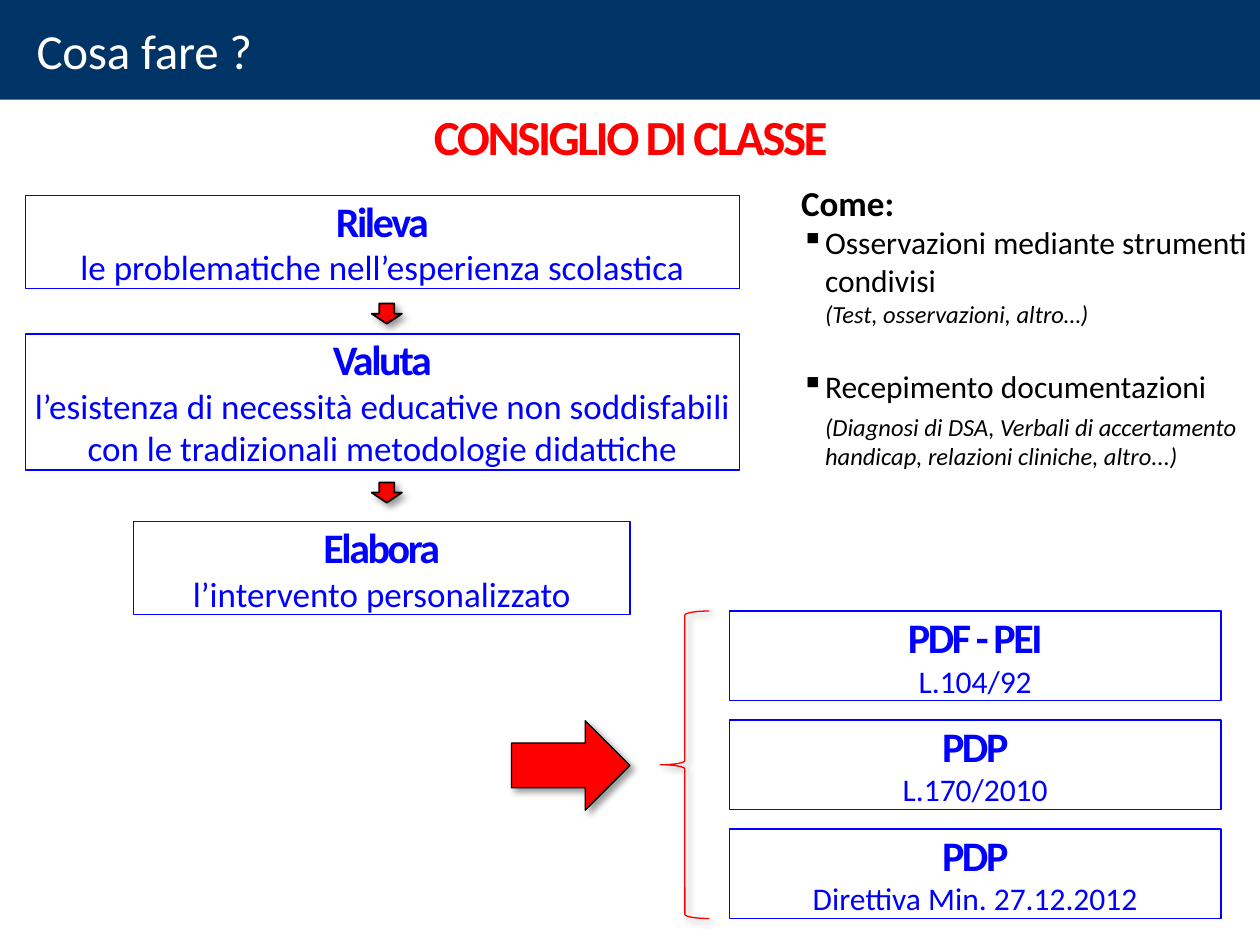
from dataclasses import dataclass

from lxml import etree
from pptx import Presentation
from pptx import util as u
from pptx.dml.color import RGBColor
from pptx.enum import shapes, text
from pptx.oxml import ns

FONT = "Calibri"
COLORS = {
    "navy": "003366",
    "red": "FF0000",
    "blue": "0000FF",
    "white": "FFFFFF",
    "black": "000000",
}


@dataclass
class Card:
    left: float
    top: float
    width: float
    height: float
    heading: str
    detail: str
    detail_size: int = 20


@dataclass
class Symbol:
    kind: shapes.MSO_SHAPE
    left: float
    top: float
    width: float
    height: float
    fill: str | None = "red"
    line: str = "black"
    weight: float = 0.75


@dataclass
class Note:
    words: str
    size: int = 18
    bold: bool = False
    italic: bool = False
    indented: bool = True
    bullet: bool = False
    before: float = 0


OUTCOME_TOP, OUTCOME_STEP, OUTCOME_HEIGHT = 4.85, 0.865, 0.71
OUTCOMES = [
    ("PDF - PEI", "L.104/92"),
    ("PDP", "L.170/2010"),
    ("PDP", "Direttiva Min. 27.12.2012"),
]
CARDS = [
    Card(0.2, 1.55, 5.67, 0.74, "Rileva", "le problematiche nell’esperienza scolastica"),
    Card(0.2, 2.65, 5.67, 1.08, "Valuta",
         "l’esistenza di necessità educative non soddisfabili "
         "con le tradizionali metodologie didattiche"),
    Card(1.06, 4.14, 3.94, 0.74, "Elabora", "l’intervento personalizzato"),
] + [
    Card(5.79, OUTCOME_TOP + row * OUTCOME_STEP, 3.9, OUTCOME_HEIGHT, heading, detail, 18)
    for row, (heading, detail) in enumerate(OUTCOMES)
]
SYMBOLS = [
    Symbol(shapes.MSO_SHAPE.DOWN_ARROW, 2.95, 2.41, 0.24, 0.16, weight=1),
    Symbol(shapes.MSO_SHAPE.DOWN_ARROW, 2.95, 3.83, 0.24, 0.16, weight=1),
    Symbol(shapes.MSO_SHAPE.RIGHT_ARROW, 4.06, 5.72, 0.94, 0.71),
    Symbol(shapes.MSO_SHAPE.LEFT_BRACE, 5.24, OUTCOME_TOP, 0.39,
           2 * OUTCOME_STEP + OUTCOME_HEIGHT, fill=None, line="red"),
]
NOTES = [
    Note("Come:", 20, bold=True, indented=False),
    Note("Osservazioni mediante strumenti condivisi", bullet=True),
    Note("(Test, osservazioni, altro…)", 14, italic=True),
    Note("Recepimento documentazioni", bullet=True, before=22),
    Note("(Diagnosi di DSA, Verbali di accertamento handicap, relazioni cliniche, altro...)",
         14, italic=True, before=4),
]


def color(name: str) -> RGBColor:
    return RGBColor.from_string(COLORS[name])


def style_runs(para, size: float, ink: str, bold=False, italic=False, spacing=0.0) -> None:
    """Format every run; spacing is the letter spacing in points."""
    for span in para.runs:
        font = span.font
        font.name, font.size = FONT, u.Pt(size)
        font.bold, font.italic = bold, italic
        font.color.rgb = color(ink)
        if spacing:
            span._r.get_or_add_rPr().set("spc", str(round(spacing * 100)))


def clear_margins(frame) -> None:
    frame.word_wrap = True
    frame.margin_left = frame.margin_right = frame.margin_top = frame.margin_bottom = 0


def add_figure(page, kind, left, top, width, height, fill, line, weight=0.75):
    figure = page.shapes.add_shape(
        kind, u.Inches(left), u.Inches(top), u.Inches(width), u.Inches(height))
    figure.shadow.inherit = False
    if fill:
        figure.fill.solid()
        figure.fill.fore_color.rgb = color(fill)
    else:
        figure.fill.background()
    if line:
        figure.line.color.rgb = color(line)
        figure.line.width = u.Pt(weight)
    else:
        figure.line.fill.background()
    return figure


def add_shadow(figure) -> None:
    """Give the figure a soft shadow down and to the right."""
    effects = figure._element.spPr.find(ns.qn("a:effectLst"))
    shadow = etree.SubElement(
        effects, ns.qn("a:outerShdw"), blurRad=str(u.Pt(4)), dist=str(u.Pt(3)),
        dir=str(45 * 60000), algn="tl", rotWithShape="0")
    tint = etree.SubElement(shadow, ns.qn("a:srgbClr"), val=COLORS["black"])
    etree.SubElement(tint, ns.qn("a:alpha"), val="40000")


def add_symbol(page, symbol: Symbol) -> None:
    figure = add_figure(page, symbol.kind, symbol.left, symbol.top, symbol.width,
                        symbol.height, symbol.fill, symbol.line, symbol.weight)
    add_shadow(figure)


def add_card(page, card: Card) -> None:
    box = add_figure(page, shapes.MSO_SHAPE.RECTANGLE, card.left, card.top,
                     card.width, card.height, "white", "blue")
    frame = box.text_frame
    clear_margins(frame)
    frame.vertical_anchor = text.MSO_ANCHOR.TOP
    frame.text = f"{card.heading}\n{card.detail}"
    heading, detail = frame.paragraphs
    heading.alignment = detail.alignment = text.PP_ALIGN.CENTER
    style_runs(heading, 24, "blue", bold=True, spacing=-1.4)
    style_runs(detail, card.detail_size, "blue")


def add_text_box(page, left: float, top: float, width: float, height: float):
    box = page.shapes.add_textbox(
        u.Inches(left), u.Inches(top), u.Inches(width), u.Inches(height))
    box.text_frame.word_wrap = True
    return box.text_frame


def add_title(page, left, top, width, words, ink, align, bold, spacing) -> None:
    frame = add_text_box(page, left, top, width, 0.47)
    clear_margins(frame)
    frame.vertical_anchor = text.MSO_ANCHOR.MIDDLE
    frame.text = words
    para = frame.paragraphs[0]
    para.alignment = align
    style_runs(para, 28, ink, bold=bold, spacing=spacing)


def add_notes(page) -> None:
    frame = add_text_box(page, 6.26, 1.39, 3.74, 2.49)
    frame.text = "\n".join(note.words for note in NOTES)
    for para, note in zip(frame.paragraphs, NOTES):
        style_runs(para, note.size, "black", note.bold, note.italic)
        para.space_before = u.Pt(note.before)
        properties = para._p.get_or_add_pPr()
        if note.indented:
            properties.set("marL", str(u.Inches(0.19)))
        if note.bullet:
            properties.set("indent", str(u.Inches(-0.19)))
            etree.SubElement(properties, ns.qn("a:buChar"), char="▪")


def main() -> None:
    deck = Presentation()
    deck.slide_width, deck.slide_height = u.Inches(10), u.Inches(7.5)
    page = deck.slides.add_slide(deck.slide_layouts[6])
    add_figure(page, shapes.MSO_SHAPE.RECTANGLE, 0, 0, 10, 0.79, "navy", None)
    add_title(page, 0.29, 0.16, 9.44, "Cosa fare ?", "white",
              text.PP_ALIGN.LEFT, False, -0.1)
    add_title(page, 3.43, 0.84, 3.15, "CONSIGLIO DI CLASSE", "red",
              text.PP_ALIGN.CENTER, True, -1.4)
    for card in CARDS:
        add_card(page, card)
    add_notes(page)
    for symbol in SYMBOLS:
        add_symbol(page, symbol)
    deck.save("out.pptx")


if __name__ == "__main__":
    main()
